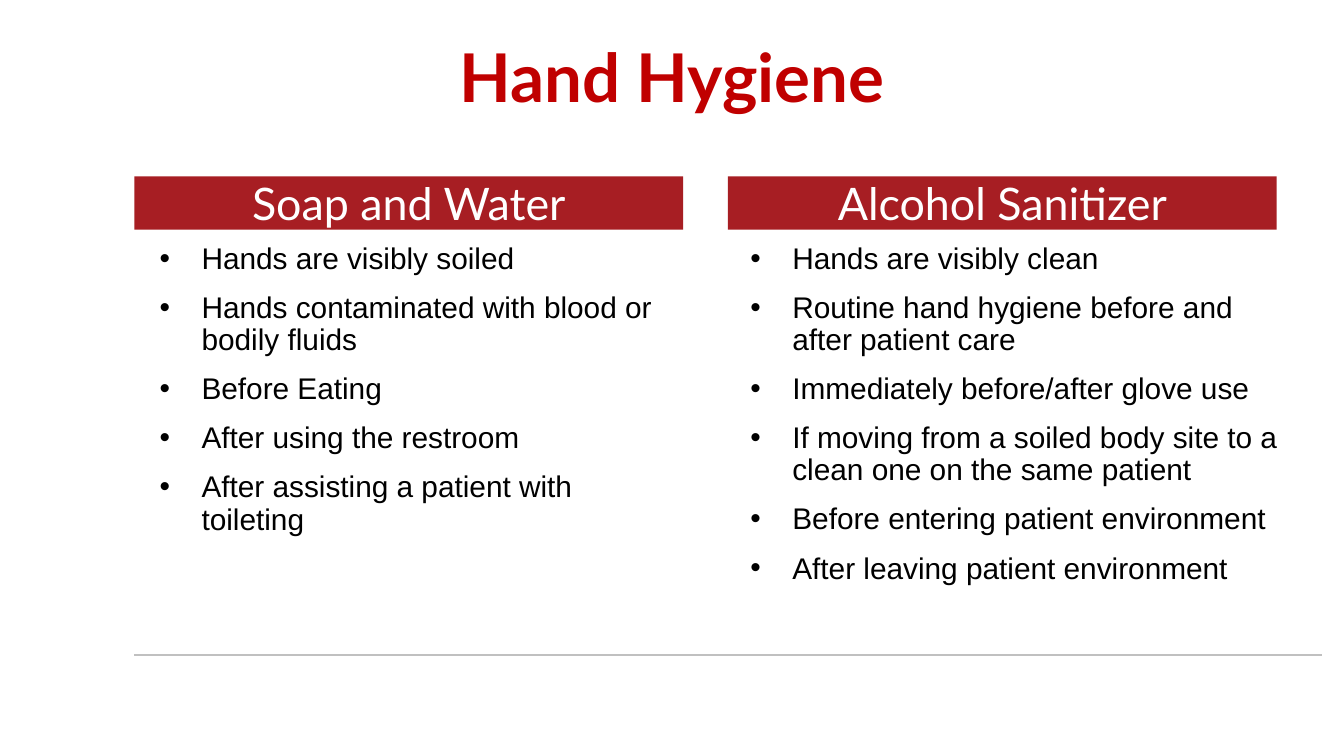
"""Build the hand hygiene slide comparing soap and water with alcohol sanitizer."""
from lxml import etree
from pptx import Presentation
from pptx import util as u
from pptx.dml.color import RGBColor
from pptx.enum import shapes, text
from pptx.oxml.ns import qn

COLORS = {"title": "C00000", "banner": "A71E23", "banner_text": "FFFFFF",
          "body": "000000", "rule": "C0C0C0"}


class Deck:
    def __init__(self, prs):
        self.s = prs.slides.add_slide(prs.slide_layouts[6])
        self.heading_font, self.body_font = "Lato", "Arial"
        self.indent = 22.5

    def color(self, name):
        return RGBColor.from_string(COLORS[name])

    def frame(self, sp, anchor, inset=None):
        tf = sp.text_frame
        tf.word_wrap = True
        tf.vertical_anchor = anchor
        if inset is not None:
            tf.margin_left = tf.margin_right = u.Pt(inset)
            tf.margin_top = tf.margin_bottom = u.Pt(inset)
        return tf

    def run(self, p, words, font, size, color, bold=False):
        r = p.add_run()
        r.text = words
        r.font.name, r.font.size, r.font.bold = font, u.Pt(size), bold
        r.font.color.rgb = self.color(color)

    def rule(self, x1, x2, y):
        ln = self.s.shapes.add_connector(
            shapes.MSO_CONNECTOR.STRAIGHT, u.Pt(x1), u.Pt(y), u.Pt(x2), u.Pt(y))
        ln.line.color.rgb = self.color("rule")
        ln.line.width = u.Pt(1)
        etree.SubElement(ln._element.spPr, qn("a:effectLst"))

    def title(self, words, x, y, w, h):
        sp = self.s.shapes.add_textbox(u.Pt(x), u.Pt(y), u.Pt(w), u.Pt(h))
        p = self.frame(sp, text.MSO_ANCHOR.TOP, 0).paragraphs[0]
        p.alignment = text.PP_ALIGN.CENTER
        p.line_spacing = u.Pt(36)
        self.run(p, words, self.heading_font, 36, "title", True)

    def banner(self, words, x, y, w, h):
        sp = self.s.shapes.add_shape(
            shapes.MSO_SHAPE.RECTANGLE, u.Pt(x), u.Pt(y), u.Pt(w), u.Pt(h))
        sp.shadow.inherit = False
        sp.fill.solid()
        sp.fill.fore_color.rgb = self.color("banner")
        sp.line.fill.background()
        p = self.frame(sp, text.MSO_ANCHOR.MIDDLE).paragraphs[0]
        p.alignment = text.PP_ALIGN.CENTER
        self.run(p, words, self.heading_font, 24, "banner_text")

    def bullets(self, items, x, y, w, h, margin):
        sp = self.s.shapes.add_textbox(u.Pt(x), u.Pt(y), u.Pt(w), u.Pt(h))
        tf = self.frame(sp, text.MSO_ANCHOR.TOP, 0)
        for i, item in enumerate(items):
            p = tf.add_paragraph() if i else tf.paragraphs[0]
            pPr = p._p.get_or_add_pPr()
            pPr.set("marL", str(u.Pt(margin)))
            pPr.set("indent", str(-u.Pt(self.indent)))
            etree.SubElement(pPr, qn("a:buFont"), typeface=self.body_font)
            etree.SubElement(pPr, qn("a:buChar"), char="•")
            p.line_spacing = 0.9
            if i:
                p.space_before = u.Pt(9)
            self.run(p, item, self.body_font, 16, "body")


def main():
    prs = Presentation()
    prs.slide_width, prs.slide_height = u.Pt(720), u.Pt(405)
    deck = Deck(prs)
    deck.rule(72, 708, 351)
    deck.title("Hand Hygiene", 60, 26, 600, 38)
    columns = [
        ("Soap and Water", 72, (36, 130.5, 324, 201, 72), [
            "Hands are visibly soiled",
            "Hands contaminated with blood or bodily fluids",
            "Before Eating",
            "After using the restroom",
            "After assisting a patient with toileting"]),
        ("Alcohol Sanitizer", 390, (402, 130.5, 294, 225, deck.indent), [
            "Hands are visibly clean",
            "Routine hand hygiene before and after patient care",
            "Immediately before/after glove use",
            "If moving from a soiled body site to a clean one on the same patient",
            "Before entering patient environment",
            "After leaving patient environment"]),
    ]
    for heading, x, box, items in columns:
        deck.banner(heading, x, 94.5, 294, 28.5)
        deck.bullets(items, *box)
    prs.save("out.pptx")


if __name__ == "__main__":
    main()
